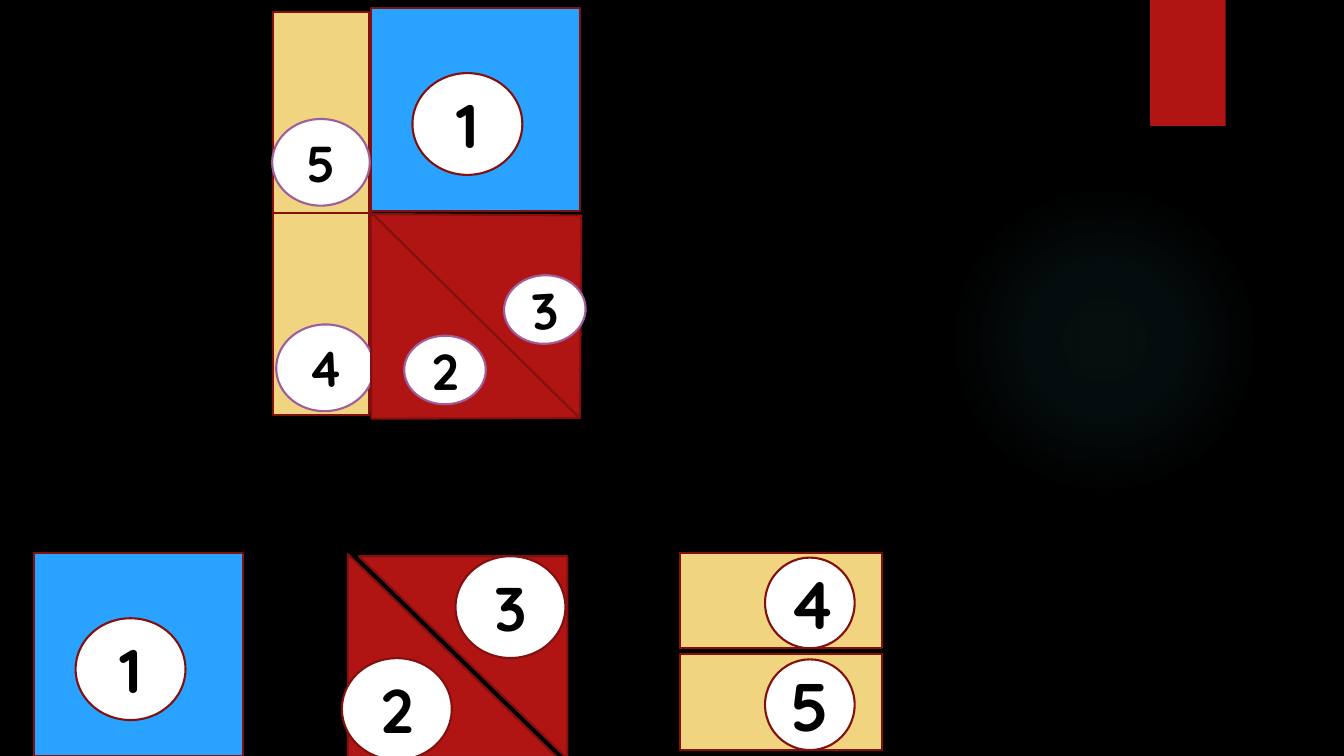
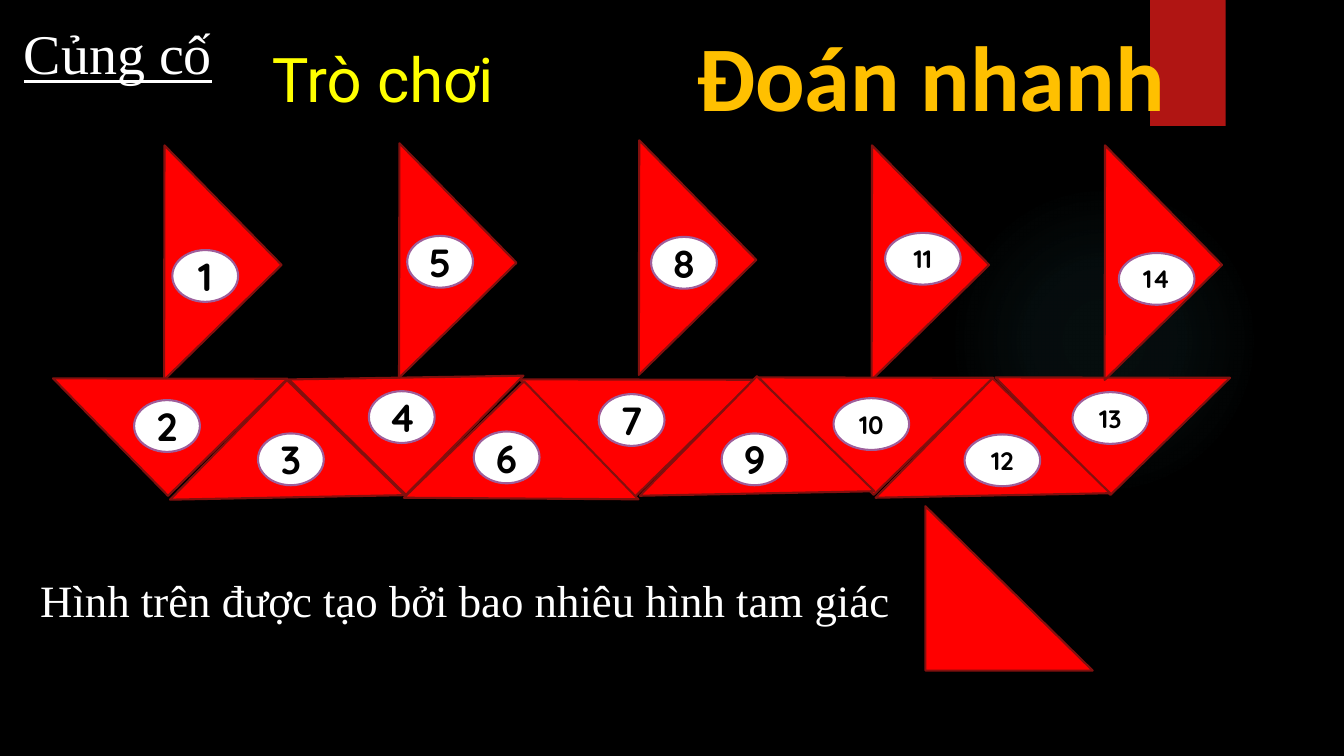
from dataclasses import dataclass

from lxml.etree import SubElement
from pptx import Presentation
from pptx.dml.color import RGBColor
from pptx.enum.shapes import MSO_SHAPE
from pptx.enum.text import MSO_ANCHOR, PP_ALIGN
from pptx.oxml.ns import qn
from pptx.util import Pt


@dataclass(frozen=True)
class Theme:
    background: str = "000000"
    ink: str = "000000"
    white: str = "FFFFFF"
    tab: str = "B01513"
    glow: str = "50B9C1"
    blue: str = "29A3FF"
    sand: str = "F0D47F"
    sail: str = "FF0000"
    edge: str = "82100E"
    badge_edge: str = "9E5E9B"
    yellow: str = "FFFF00"
    amber: str = "FFC000"
    line_width: float = 1.5
    number_font: str = "Quicksand"
    serif: str = "Times New Roman"
    game_font: str = "Roboto"
    title_font: str = "Calibri"
    number_sizes: tuple = (48, 44, 36, 28, 18)
    title_size: int = 66
    game_size: int = 44
    heading_size: int = 40
    question_size: int = 32


THEME = Theme()
XL, LARGE, MEDIUM, SMALL, TINY = THEME.number_sizes
RECT, TRIANGLE, OVAL = MSO_SHAPE.RECTANGLE, MSO_SHAPE.RIGHT_TRIANGLE, MSO_SHAPE.OVAL


def write(frame, text, *, size, font, color, bold=False, underline=False,
          align=PP_ALIGN.LEFT, anchor=MSO_ANCHOR.TOP, wrap=True):
    frame.word_wrap = wrap
    frame.vertical_anchor = anchor
    paragraph = frame.paragraphs[0]
    paragraph.alignment = align
    run = paragraph.add_run()
    run.text = text
    run.font.size = Pt(size)
    run.font.name = font
    run.font.bold = bold
    run.font.underline = underline
    run.font.color.rgb = RGBColor.from_string(color)


def add_label(slide, box, text, **text_format):
    label = slide.shapes.add_textbox(*map(Pt, box))
    write(label.text_frame, text, **text_format)


def add_figure(slide, outline, box, fill, edge=None, turn=0):
    """Draw a preset shape in box (left, top, width, height)."""
    figure = slide.shapes.add_shape(outline, *map(Pt, box))
    figure.shadow.inherit = False
    figure.rotation = turn
    figure.fill.solid()
    figure.fill.fore_color.rgb = RGBColor.from_string(fill)
    if edge:
        figure.line.color.rgb = RGBColor.from_string(edge)
        figure.line.width = Pt(THEME.line_width)
    else:
        figure.line.fill.background()
    return figure


def add_badge(slide, box, number, size, edge=THEME.badge_edge, turn=0):
    badge = add_figure(slide, OVAL, box, THEME.white, edge, turn)
    write(badge.text_frame, str(number), size=size, font=THEME.number_font,
          color=THEME.ink, bold=True, align=PP_ALIGN.CENTER,
          anchor=MSO_ANCHOR.MIDDLE)


def add_glow(slide, box):
    """Draw a faint disc that fades out towards its rim."""
    glow = add_figure(slide, OVAL, box, THEME.glow)
    glow.fill.gradient()
    gradient = glow.fill._xPr.find(qn("a:gradFill"))
    for child in list(gradient):
        gradient.remove(child)
    stops = SubElement(gradient, qn("a:gsLst"))
    for position, alpha in ((0, 7), (36, 6), (69, 0)):
        stop = SubElement(stops, qn("a:gs"), pos=str(position * 1000))
        color = SubElement(stop, qn("a:srgbClr"), val=THEME.glow)
        SubElement(color, qn("a:alpha"), val=str(alpha * 1000))
    fade = SubElement(gradient, qn("a:path"), {"path": "circle"})
    SubElement(fade, qn("a:fillToRect"), l="50000", t="50000", r="50000", b="50000")


def new_slide(deck):
    """Add a slide with the shared background, glow and corner tab."""
    slide = deck.slides.add_slide(deck.slide_layouts[6])
    slide.background.fill.solid()
    slide.background.fill.fore_color.rgb = RGBColor.from_string(THEME.background)
    add_glow(slide, (677.5, 131.8, 222, 222))
    add_figure(slide, RECT, (821.5, 0, 54, 90), THEME.tab)
    return slide


def add_piece(slide, box, outline, fill, number, badge, size,
              badge_edge=THEME.badge_edge, turn=0, badge_turn=0):
    """Draw a numbered puzzle piece; badge is measured from the corner of box."""
    left, top = box[:2]
    dx, dy, width, height = badge
    add_figure(slide, outline, box, fill, THEME.edge, turn)
    add_badge(slide, (left + dx, top + dy, width, height), number, size,
              badge_edge, badge_turn)


def add_square(slide, left, top):
    add_piece(slide, (left, top, 149, 144.7), RECT, THEME.blue, 1,
              (29.5, 46.4, 78.5, 72.7), LARGE, THEME.edge)


def add_loose_pieces(slide, left, top):
    add_square(slide, left, top)
    triangles = ((2, 224, 0.7, 0, -4.3, 74.2), (3, 231.8, 2.1, 180, 69.1, 0))
    for number, x, y, turn, dx, dy in triangles:
        add_piece(slide, (left + x, top + y, 149, 144.7), TRIANGLE, THEME.tab,
                  number, (dx, dy, 78.5, 72.7), LARGE, THEME.edge, turn)
    for row, number in enumerate((4, 5)):
        add_piece(slide, (left + 461, top - 0.5 + row * 72.7, 144.7, 68.4), RECT,
                  THEME.sand, number, (61, 3.6, 64, 64.8), XL, THEME.edge)


def add_assembled_figure(slide, left, top):
    add_square(slide, left + 70, top)
    bars = ((5, 2.8, -0.7, 76.4, 0), (4, 146.1, 2.2, 79.9, -2.6))
    for number, y, dx, dy, tilt in bars:
        add_piece(slide, (left, top + y, 68.4, 144.7), RECT, THEME.sand, number,
                  (dx, dy, 69.8, 61.9), MEDIUM, badge_turn=tilt)
    triangles = ((2, 69.9, 145.4, 147.6, -0.2, 23.7, 88.6, -0.2),
                 (3, 70.6, 147.6, 144.7, 180.4, 94.3, 43.2, -3.4))
    for number, x, y, height, turn, dx, dy, tilt in triangles:
        add_piece(slide, (left + x, top + y, 149, height), TRIANGLE, THEME.tab,
                  number, (dx, dy, 58.3, 49), MEDIUM, turn=turn, badge_turn=tilt)


def add_sail(slide, left, top, turn=0):
    add_figure(slide, TRIANGLE, (left, top, 119.5, 117.4), THEME.sail,
               THEME.edge, turn)


# Each row: number, triangle left and top, turn, badge left and top.
BOAT = (
    (4, 194.4, 111, 314.6, 227.5, 179.4),
    (5, 189.4, 27.4, 225.6, 254.9, 68.5),
    (1, 21.6, 28.9, 225.6, 87.1, 78.6),
    (2, 25.9, 111.7, 315.6, 59.8, 185.8),
    (8, 360.7, 25.3, 225.6, 429.1, 69.2),
    (11, 527, 28.9, 225.6, 596.2, 66.3),
    (13, 699.1, 111, 315.6, 730.1, 180.1),
    (10, 529.9, 111, 315.6, 559.4, 184.4),
    (7, 359.3, 112.4, 315.6, 391.7, 181.5),
    (14, 693.4, 28.9, 225.6, 763.2, 80.7),
    (3, 109.4, 196.6, 134.4, 148.3, 209.6),
    (12, 613.4, 195.2, 134.4, 653, 210.3),
    (9, 445, 193.8, 134.4, 479.5, 209.6),
    (6, 276.5, 197.4, 135.9, 302.4, 208.2),
)


def add_boat(slide, left, top):
    for _, x, y, turn, _, _ in BOAT:
        add_sail(slide, left + x, top + y, turn)
    for number, _, _, _, x, y in sorted(BOAT):
        width, size = (47, SMALL) if number < 10 else (54, TINY)
        add_badge(slide, (left + x, top + y, width, 37), number, size)


def add_game_headings(slide):
    add_label(slide, (10, 10, 177, 55), "Củng cố", size=THEME.heading_size,
              font=THEME.serif, color=THEME.white, underline=True)
    add_label(slide, (187.2, 26, 277, 60), "Trò chơi", size=THEME.game_size,
              font=THEME.game_font, color=THEME.yellow, wrap=False)
    add_label(slide, (490.3, 10, 460, 87), "Đoán nhanh", size=THEME.title_size,
              font=THEME.title_font, color=THEME.amber, bold=True)


def build_puzzle_slide(deck):
    slide = new_slide(deck)
    add_loose_pieces(slide, 24.5, 395.2)
    add_assembled_figure(slide, 195.1, 5.8)


def build_game_slide(deck):
    slide = new_slide(deck)
    add_game_headings(slide)
    add_label(slide, (21.6, 405.4, 627, 46),
              "Hình trên được tạo bởi bao nhiêu hình tam giác",
              size=THEME.question_size, font=THEME.serif, color=THEME.white,
              wrap=False)
    add_boat(slide, 36, 100)
    add_sail(slide, 661, 361.6)


def main():
    deck = Presentation()
    deck.slide_width, deck.slide_height = Pt(960), Pt(540)
    build_puzzle_slide(deck)
    build_game_slide(deck)
    deck.save("out.pptx")


if __name__ == "__main__":
    main()
